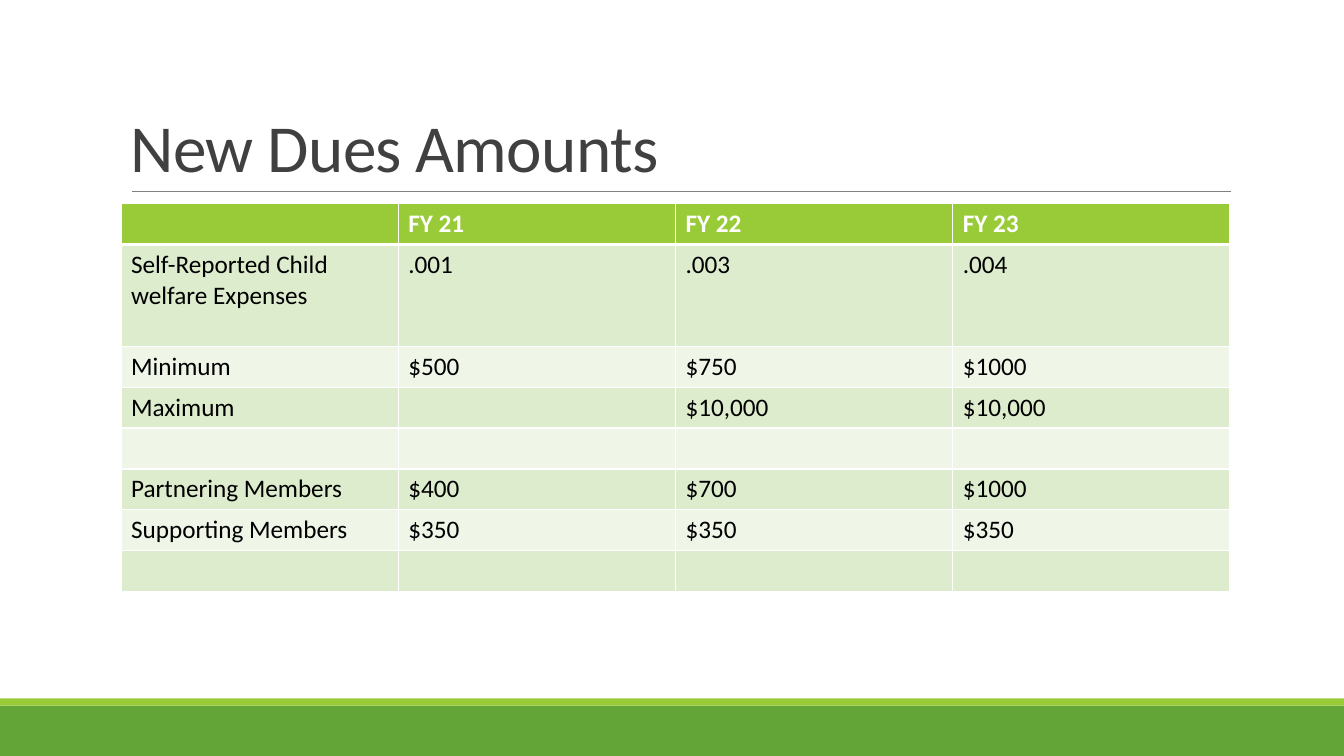
from lxml import etree
from pptx import Presentation
from pptx.dml.color import RGBColor
from pptx.enum.shapes import MSO_CONNECTOR, MSO_SHAPE
from pptx.enum.text import MSO_ANCHOR
from pptx.oxml import parse_xml
from pptx.oxml.ns import nsdecls, qn
from pptx.util import Inches, Pt

RECT = MSO_SHAPE.RECTANGLE
LINE = MSO_CONNECTOR.STRAIGHT
BOTTOM = MSO_ANCHOR.BOTTOM

COLORS = {
    "green": "63A537", "lime": "99CB38", "rule": "808080", "title": "404040",
    "white": "FFFFFF", "black": "000000", "odd": "DEECCE", "even": "EFF6E8",
}
FORMATS = {
    "title": {"name": "Calibri", "size": Pt(48)},
    "head": {"name": "Calibri", "size": Pt(18), "bold": True},
    "body": {"name": "Calibri", "size": Pt(18), "bold": False},
}
DUES = [
    ["", "FY 21", "FY 22", "FY 23"],
    ["Self-Reported Child welfare Expenses", ".001", ".003", ".004"],
    ["Minimum", "$500", "$750", "$1000"],
    ["Maximum", "", "$10,000", "$10,000"],
    ["", "", "", ""],
    ["Partnering Members", "$400", "$700", "$1000"],
    ["Supporting Members", "$350", "$350", "$350"],
    ["", "", "", ""],
]
TALL = 1.01
ROW = (3.85 - TALL) / (len(DUES) - 1)


class Painter:
    """Holds the colours, the text formats and the current slide."""

    def __init__(self, slide, colors, formats):
        self.slide = slide
        self.colors = colors
        self.formats = formats

    def color(self, key):
        return RGBColor.from_string(self.colors[key])

    def label(self, para, text, style, color):
        """Add a formatted run to a paragraph."""
        run = para.add_run()
        run.text = text
        for name, value in self.formats[style].items():
            setattr(run.font, name, value)
        run.font.color.rgb = self.color(color)
        return run

    def bar(self, box, color):
        shape = self.slide.shapes.add_shape(RECT, *map(Inches, box))
        shape.shadow.inherit = False
        shape.fill.solid()
        shape.fill.fore_color.rgb = self.color(color)
        shape.line.fill.background()

    def rule(self, ends, color, width):
        line = self.slide.shapes.add_connector(LINE, *map(Inches, ends))
        line.line.color.rgb = self.color(color)
        line.line.width = Pt(width)
        etree.SubElement(line._element.spPr, qn("a:effectLst"))

    def title(self, box, text):
        frame = self.slide.shapes.add_textbox(*map(Inches, box)).text_frame
        frame.word_wrap = True
        frame.vertical_anchor = BOTTOM
        para = frame.paragraphs[0]
        para.line_spacing = 0.85
        run = self.label(para, text, "title", "title")
        run._r.get_or_add_rPr().set("spc", "-50")

    def edges(self, cell, row):
        """Draw white borders, thick between the header and the body."""
        widths = {"L": 1, "R": 1, "T": 3 if row == 1 else 1, "B": 3 if row == 0 else 1}
        props = cell._tc.get_or_add_tcPr()
        for index, (side, width) in enumerate(widths.items()):
            props.insert(index, parse_xml(
                f'<a:ln{side} {nsdecls("a")} w="{Pt(width)}"><a:solidFill>'
                f'<a:srgbClr val="{self.colors["white"]}"/></a:solidFill></a:ln{side}>'))

    def table(self, box, rows):
        grid = self.slide.shapes.add_table(len(rows), len(rows[0]), *map(Inches, box)).table
        for r, texts in enumerate(rows):
            grid.rows[r].height = Inches(TALL if r == 1 else ROW)
            fill = "lime" if r == 0 else ("even", "odd")[r % 2]
            style, ink = ("head", "white") if r == 0 else ("body", "black")
            for c, text in enumerate(texts):
                cell = grid.cell(r, c)
                cell.fill.solid()
                cell.fill.fore_color.rgb = self.color(fill)
                self.edges(cell, r)
                if text:
                    self.label(cell.text_frame.paragraphs[0], text, style, ink)


def main():
    deck = Presentation()
    deck.slide_width, deck.slide_height = Inches(13.33), Inches(7.5)
    slide = deck.slides.add_slide(deck.slide_layouts[6])
    paint = Painter(slide, COLORS, FORMATS)
    paint.bar((0, 7, 13.33, 0.5), "green")
    paint.bar((0, 6.93, 13.33, 0.07), "lime")
    paint.rule((1.31, 1.9, 12.21, 1.9), "rule", 0.5)
    paint.title((1.2, 0.31, 11, 1.59), "New Dues Amounts")
    paint.table((1.2, 2.02, 11, 3.85), DUES)
    deck.save("out.pptx")


if __name__ == "__main__":
    main()
